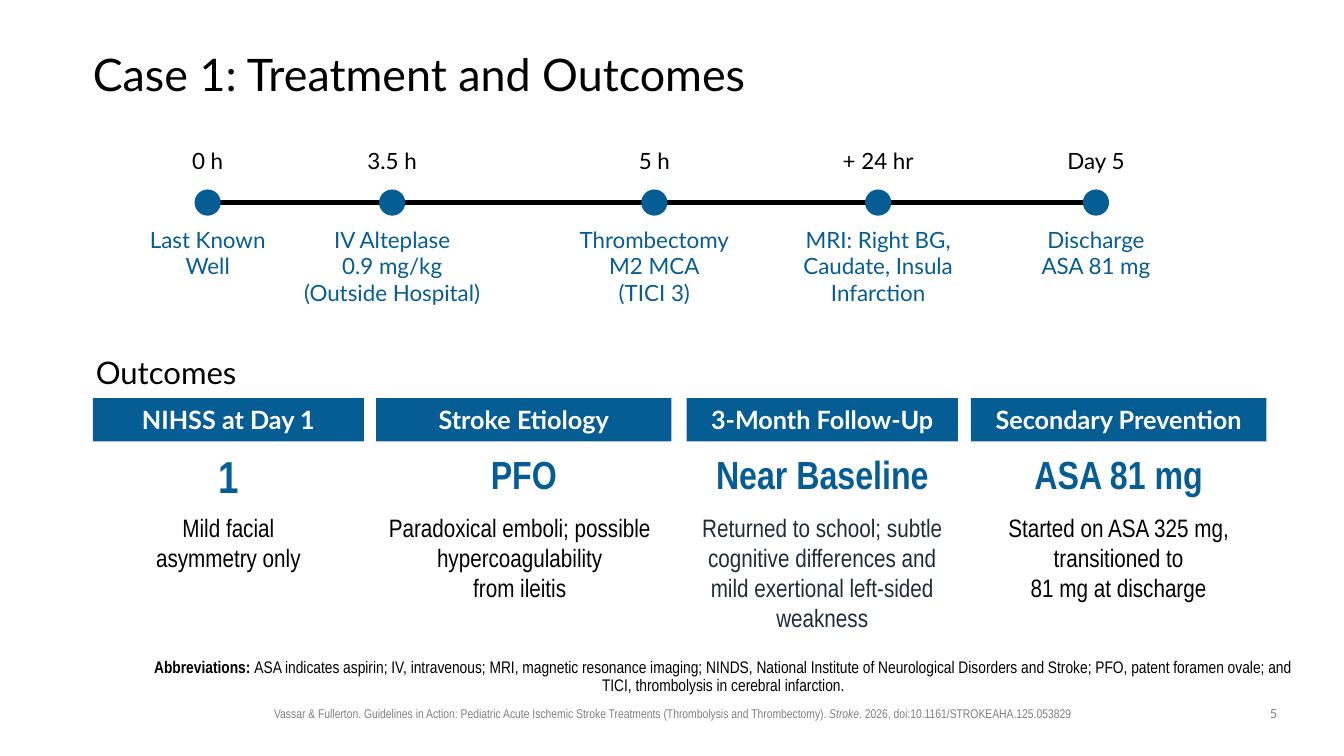
from lxml.etree import SubElement
from pptx import Presentation
from pptx.dml.color import RGBColor
from pptx.enum.shapes import MSO_CONNECTOR as Wire, MSO_SHAPE as Shape
from pptx.enum.text import MSO_ANCHOR as Anchor, MSO_AUTO_SIZE as Fit, PP_ALIGN as Align
from pptx.oxml.ns import qn
from pptx.util import Inches, Pt

BLUE, BLACK, GRAY, WHITE, SLATE = "065D93", "000000", "808080", "FFFFFF", "1E2D3A"
LATO, SLIM = "Lato", "Arial Narrow"

STOPS = [
    (2.06, 1.35, "0 h", ["Last Known Well"]),
    (3.89, 2.23, "3.5 h", ["IV Alteplase", "0.9 mg/kg", "(Outside Hospital)"]),
    (6.49, 1.88, "5 h", ["Thrombectomy", "M2 MCA", "(TICI 3)"]),
    (8.71, 1.98, "+ 24 hr", ["MRI: Right BG,", "Caudate, Insula", "Infarction"]),
    (10.87, 1.45, "Day 5", ["Discharge", "ASA 81 mg"]),
]

CARDS = [
    (0.92, 2.69, "NIHSS at Day 1", "1", 32,
     0.92, 2.69, "Mild facial\nasymmetry only", BLACK),
    (3.73, 2.93, "Stroke Etiology", "PFO", 28,
     3.64, 3.03, "Paradoxical emboli; possible hypercoagulability\nfrom ileitis", BLACK),
    (6.81, 2.69, "3-Month Follow-Up", "Near Baseline", 28,
     6.75, 2.81, "Returned to school; subtle cognitive differences and "
     "mild exertional left-sided weakness", SLATE),
    (9.63, 2.93, "Secondary Prevention", "ASA 81 mg", 28,
     9.63, 2.93, "Started on ASA 325 mg, transitioned to\n81 mg at discharge", BLACK),
]


def paint(code):
    return RGBColor.from_string(code)


def place(shape, x, y, w, h):
    shape.left, shape.top, shape.width, shape.height = map(Inches, (x, y, w, h))


def write(shape, *lines, size=16, font=LATO, color=BLACK, bold=False,
          align=Align.CENTER, gap=1.0, anchor=Anchor.TOP, pad=None, plain=False):
    frame = shape.text_frame
    frame.word_wrap = True
    frame.auto_size = Fit.NONE
    frame.vertical_anchor = anchor
    if pad:
        (frame.margin_left, frame.margin_top,
         frame.margin_right, frame.margin_bottom) = map(Inches, pad)
    for i, line in enumerate(lines):
        para = frame.add_paragraph() if i else frame.paragraphs[0]
        if plain:
            props = para._p.get_or_add_pPr()
            props.set("marL", "0")
            props.set("indent", "0")
            SubElement(props, qn("a:buNone"))
        para.alignment = align
        para.line_spacing = gap
        para.space_before = Pt(0)
        parts = [(line, {})] if isinstance(line, str) else line
        for text, style in parts:
            for n, piece in enumerate(text.split("\n")):
                if n:
                    para.add_line_break()
                run = para.add_run()
                run.text = piece
                run.font.size = Pt(size)
                run.font.name = font
                run.font.color.rgb = paint(color)
                run.font.bold = style.get("bold", bold)
                run.font.italic = style.get("slant", False)


def label(slide, x, y, w, h, *lines, **style):
    box = slide.shapes.add_textbox(*map(Inches, (x, y, w, h)))
    write(box, *lines, **style)


def block(slide, kind, x, y, w, h):
    shape = slide.shapes.add_shape(kind, *map(Inches, (x, y, w, h)))
    shape.shadow.inherit = False
    shape.fill.solid()
    shape.fill.fore_color.rgb = paint(BLUE)
    shape.line.fill.background()
    return shape


def rule(slide, x, y, end):
    line = slide.shapes.add_connector(
        Wire.STRAIGHT, Inches(x), Inches(y), Inches(end), Inches(y))
    line.line.color.rgb = paint(BLACK)
    line.line.width = Pt(4)
    SubElement(line._element.spPr, qn("a:effectLst"))


def track(slide):
    y, size = 2.01, 0.26
    rule(slide, STOPS[0][0], y, STOPS[-1][0])
    for mid, wide, time, event in STOPS:
        block(slide, Shape.OVAL, mid - size / 2, y - size / 2, size, size)
        label(slide, mid - 0.7, 1.41, 1.4, 0.37, time)
        label(slide, mid - wide / 2, 2.19, wide, 0.91, *event, color=BLUE)


def card(slide, x, w, head, key, size, left, wide, note, color):
    bar = block(slide, Shape.RECTANGLE, x, 3.95, w, 0.43)
    write(bar, head, size=18, color=WHITE, bold=True, anchor=Anchor.MIDDLE)
    label(slide, x, 4.55, w, 0.46, key, size=size, font=SLIM,
          color=BLUE, bold=True, gap=0.7)
    label(slide, left, 5.03, wide, 1.31, note, size=18, font=SLIM, color=color)


def main():
    deck = Presentation()
    deck.slide_width, deck.slide_height = Inches(13.33), Inches(7.5)
    slide = deck.slides.add_slide(deck.slide_layouts[3])
    title, intro, terms = slide.placeholders

    place(title, 0.92, 0.4, 11.5, 0.72)
    write(title, "Case 1: Treatment and Outcomes", size=32, align=Align.LEFT,
          gap=0.9, anchor=Anchor.MIDDLE, pad=(0, 0, 0, 0))
    track(slide)

    inset = (0, 0.05, 0.1, 0.05)
    place(intro, 0.95, 3.5, 1.68, 0.49)
    write(intro, "Outcomes", size=22.2, align=Align.LEFT, gap=0.9,
          pad=inset, plain=True)
    for item in CARDS:
        card(slide, *item)

    place(terms, 1.48, 6.33, 11.49, 0.62)
    write(terms, [
        ("Abbreviations: ", {"bold": True}),
        ("ASA indicates aspirin; IV, intravenous; MRI, magnetic resonance imaging; "
         "NINDS, National Institute of Neurological Disorders and Stroke; "
         "PFO, patent foramen ovale; and TICI, thrombolysis in cerebral infarction.", {}),
    ], size=12, font=SLIM, gap=0.9, anchor=Anchor.BOTTOM, pad=inset, plain=True)

    label(slide, 2.36, 6.95, 8.62, 0.25, [
        ("Vassar & Fullerton. Guidelines in Action: Pediatric Acute Ischemic Stroke "
         "Treatments (Thrombolysis and Thrombectomy). ", {}),
        ("Stroke", {"slant": True}),
        (". 2026, doi:10.1161/STROKEAHA.125.053829", {}),
    ], size=9, font=SLIM, color=GRAY)
    label(slide, 12.42, 6.95, 0.42, 0.26, "5", size=9, color=GRAY)
    deck.save("out.pptx")


if __name__ == "__main__":
    main()
